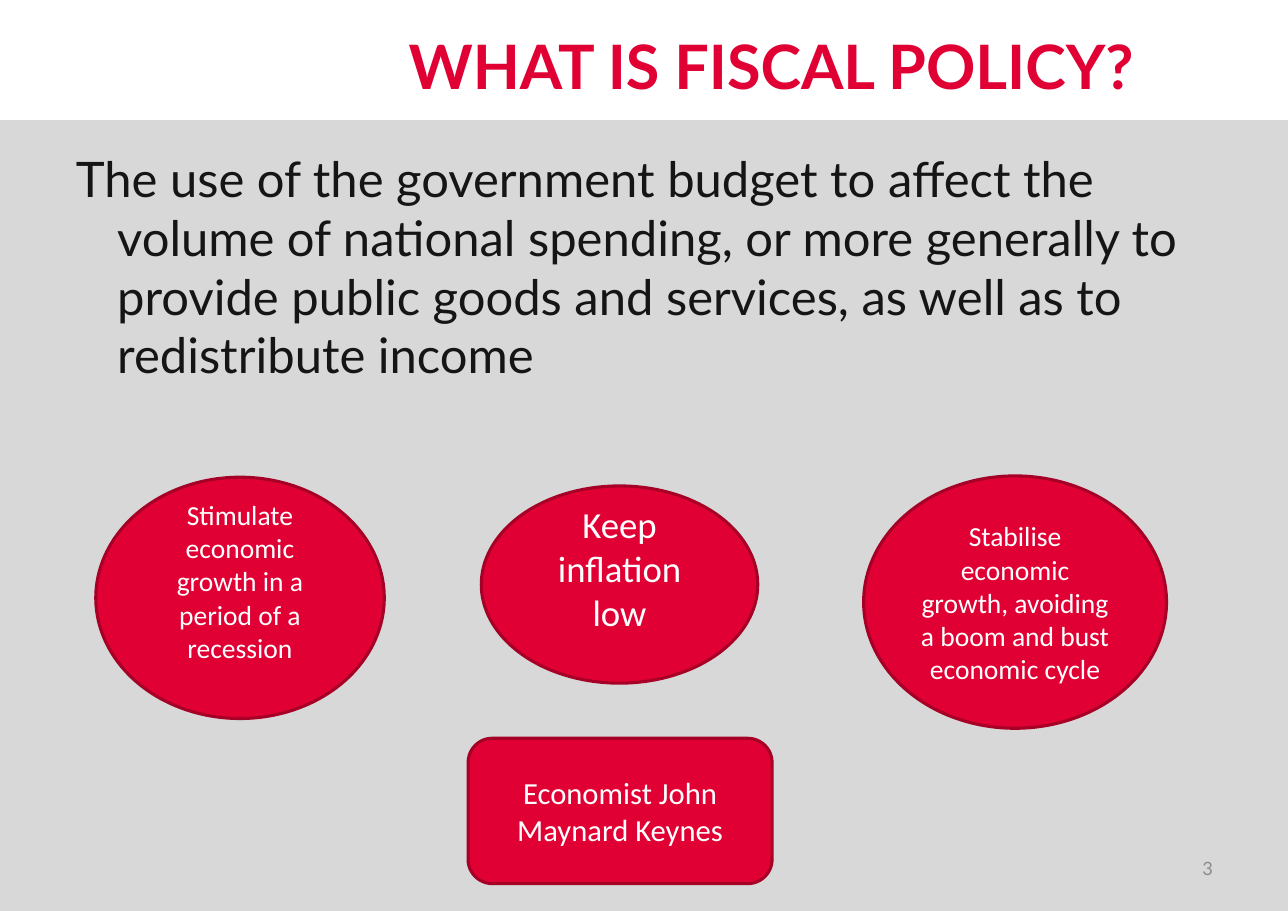
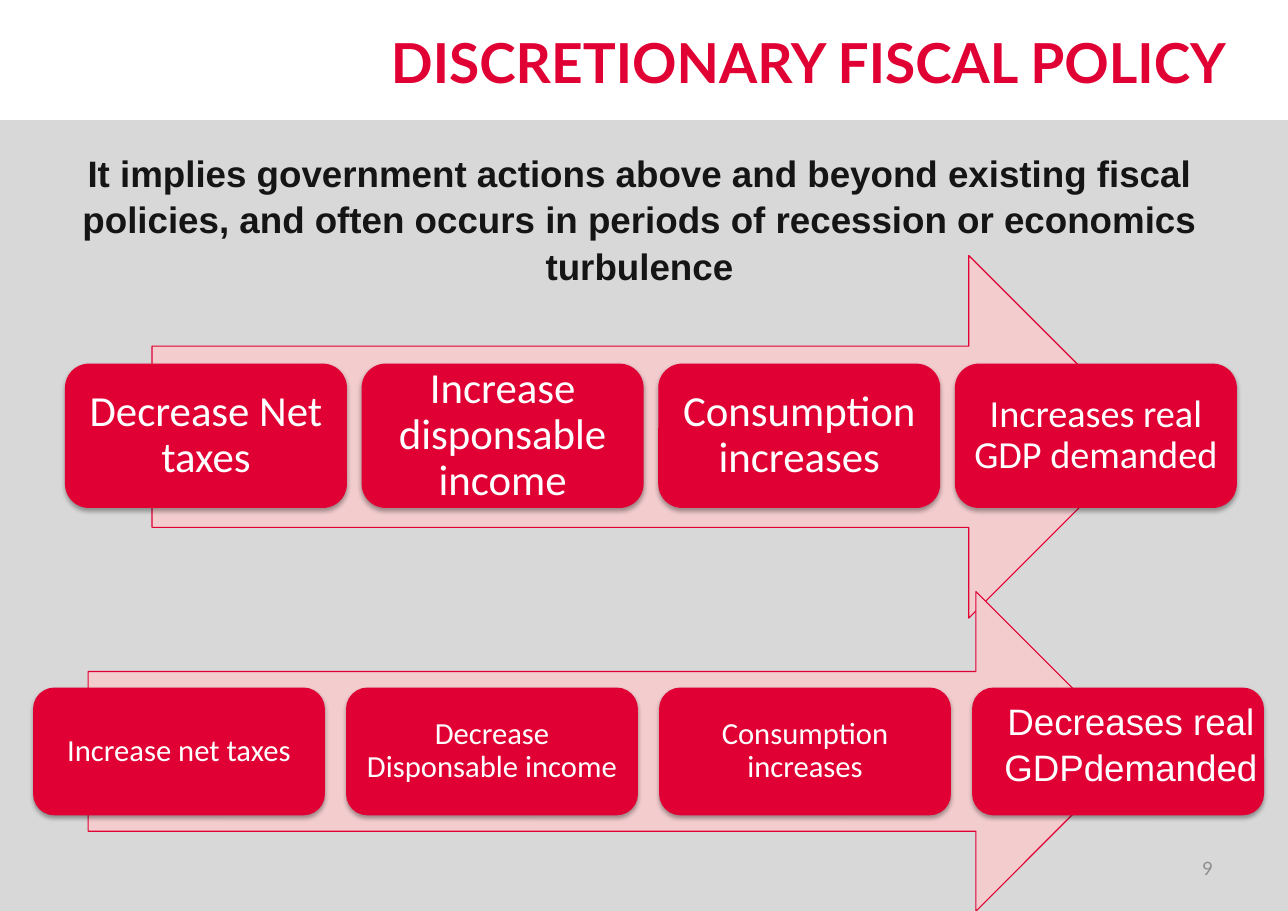
from dataclasses import dataclass
from typing import Any

import pptx
import pptx.dml.color
import pptx.enum.shapes
import pptx.enum.text
import pptx.oxml
import pptx.oxml.ns
import pptx.util

Pt = pptx.util.Pt
SHAPE = pptx.enum.shapes.MSO_SHAPE
ALIGN = pptx.enum.text.PP_ALIGN
ANCHOR = pptx.enum.text.MSO_ANCHOR

WIDTH, HEIGHT = 841.89, 595.28
BAND_TOP = 78.5
RED, DARK_RED, PINK = "E00034", "A60026", "F3CCCE"
GREY, INK, MUTED, WHITE = "D8D8D8", "151515", "8C8C8C", "FFFFFF"

TITLE = {"name": "Lato", "bold": True}
BODY = {"name": "Lato", "size": Pt(32)}
NUMBER = {"name": "Lato", "size": Pt(12)}
LABEL = {"name": "Calibri"}
STATEMENT = {"name": "Arial", "size": Pt(24)}


@dataclass
class Box:
    left: float
    top: float
    width: float
    height: float

    def lengths(self) -> list[int]:
        return [Pt(v) for v in (self.left, self.top, self.width, self.height)]


@dataclass
class Goal:
    kind: Any
    box: Box
    text: str
    size: float
    bottom: float = 3.6


@dataclass
class Step:
    text: str
    size: float
    inset: float


@dataclass
class Chain:
    arrow: Box
    first: Box
    pitch: float
    steps: list[Step]


GOALS = [
    Goal(SHAPE.ROUNDED_RECTANGLE, Box(306, 482.4, 198.7, 95),
         "Economist John Maynard Keynes", 20),
    Goal(SHAPE.OVAL, Box(314.6, 317.5, 180.7, 128.9), "Keep inflation low", 24, 25.6),
    Goal(SHAPE.OVAL, Box(62.6, 311.8, 188.6, 157.7),
         "Stimulate economic growth in a period of a recession", 18, 25.6),
    Goal(SHAPE.OVAL, Box(564.5, 311, 198, 164.9),
         "Stabilise economic growth, avoiding a boom and bust economic cycle", 18),
]

CHAINS = [
    Chain(Box(99.4, 167, 652.3, 236.9), Box(42.5, 237.6, 184.3, 94.3), 193.9, [
        Step("Decrease Net taxes", 28, 8.6),
        Step("Increase disponsable income", 28, 8.6),
        Step("Consumption increases", 28, 8.6),
        Step("Increases real GDP demanded", 25, 7),
    ]),
    Chain(Box(57.6, 386.6, 684.7, 208.8), Box(21.6, 449.3, 190.8, 83.5), 204.6, [
        Step("Increase net taxes", 20, 5.8),
        Step("Decrease Disponsable income", 20, 5.8),
        Step("Consumption increases", 20, 5.8),
        Step("", 20, 5.8),
    ]),
]


def rgb(color: str) -> pptx.dml.color.RGBColor:
    return pptx.dml.color.RGBColor.from_string(color)


def write(sp: Any, text: str, font: dict, color: str, align: Any = ALIGN.CENTER,
          anchor: Any = ANCHOR.MIDDLE, spacing: float = 1.0) -> Any:
    """Put one formatted paragraph in a shape and return the paragraph."""
    tf = sp.text_frame
    tf.word_wrap = True
    tf.vertical_anchor = anchor
    p = tf.paragraphs[0]
    p.alignment = align
    p.line_spacing = spacing
    r = p.add_run()
    r.text = text
    for name, value in font.items():
        setattr(r.font, name, value)
    r.font.color.rgb = rgb(color)
    return p


def add_text(s: Any, box: Box, text: str, font: dict, color: str, **layout: Any) -> Any:
    return write(s.shapes.add_textbox(*box.lengths()), text, font, color, **layout)


def add_shape(s: Any, kind: Any, box: Box, fill: str, line: str = "",
              line_width: float = 0) -> Any:
    sp = s.shapes.add_shape(kind, *box.lengths())
    sp.shadow.inherit = False
    sp.fill.solid()
    sp.fill.fore_color.rgb = rgb(fill)
    if line:
        sp.line.color.rgb = rgb(line)
        sp.line.width = Pt(line_width)
    else:
        sp.line.fill.background()
    return sp


def add_shadow(sp: Any) -> None:
    effects = sp._element.spPr.find(pptx.oxml.ns.qn("a:effectLst"))
    effects.append(pptx.oxml.parse_xml(
        f'<a:outerShdw {pptx.oxml.ns.nsdecls("a")} blurRad="{Pt(3.1)}" dist="{Pt(1.8)}"'
        ' dir="5400000" rotWithShape="0"><a:srgbClr val="000000">'
        '<a:alpha val="35000"/></a:srgbClr></a:outerShdw>'))


def new_slide(prs: Any, title: str, box: Box, size: float, align: Any, number: str) -> Any:
    """Add a slide with the grey band, title and slide number."""
    s = prs.slides.add_slide(prs.slide_layouts[6])
    add_shape(s, SHAPE.RECTANGLE, Box(0, BAND_TOP, WIDTH, HEIGHT - BAND_TOP), GREY)
    add_text(s, box, title, TITLE | {"size": Pt(size)}, RED, align=align)
    add_text(s, Box(603.4, 551.5, 196.6, 31.7), number, NUMBER, MUTED, align=ALIGN.RIGHT)
    return s


def add_goal(s: Any, goal: Goal) -> None:
    sp = add_shape(s, goal.kind, goal.box, RED, DARK_RED, 2)
    sp.text_frame.margin_bottom = Pt(goal.bottom)
    write(sp, goal.text, LABEL | {"size": Pt(goal.size)}, WHITE)


def add_chain(s: Any, chain: Chain) -> None:
    """Draw an arrow with evenly spaced step cards over it."""
    add_shape(s, SHAPE.RIGHT_ARROW, chain.arrow, PINK, RED, 0.75)
    first = chain.first
    for i, step in enumerate(chain.steps):
        box = Box(first.left + i * chain.pitch, first.top, first.width, first.height)
        sp = add_shape(s, SHAPE.ROUNDED_RECTANGLE, box, RED)
        add_shadow(sp)
        if step.text:
            for side in ("left", "right", "top", "bottom"):
                setattr(sp.text_frame, f"margin_{side}", Pt(step.inset))
            write(sp, step.text, LABEL | {"size": Pt(step.size)}, WHITE, spacing=0.9)


def definition_slide(prs: Any) -> None:
    s = new_slide(prs, "WHAT IS FISCAL POLICY?", Box(163.4, 16.6, 584.6, 51.8),
                  40, ALIGN.RIGHT, "3")
    p = add_text(
        s, Box(42.5, 93.6, 757.4, 200),
        "The use of the government budget to affect the volume of national spending, "
        "or more generally to provide public goods and services, as well as to "
        "redistribute income", BODY, INK, align=ALIGN.LEFT, anchor=ANCHOR.TOP)
    for name, value in {"marL": Pt(27), "indent": Pt(-27)}.items():
        p._p.get_or_add_pPr().set(name, str(value))
    for goal in GOALS:
        add_goal(s, goal)


def discretionary_slide(prs: Any) -> None:
    s = new_slide(prs, "DISCRETIONARY FISCAL POLICY", Box(215.3, 14.4, 626.5, 51.8),
                  36, ALIGN.CENTER, "9")
    upper, lower = CHAINS
    add_chain(s, upper)
    add_text(
        s, Box(29.5, 93.6, 776.9, 94.3),
        "It implies government actions above and beyond existing fiscal policies, "
        "and often occurs in periods of recession or economics turbulence",
        STATEMENT | {"bold": True}, INK, anchor=ANCHOR.TOP, spacing=1.05)
    add_chain(s, lower)
    add_text(s, Box(636.5, 451.4, 205.3, 65.5), "Decreases real GDPdemanded",
             STATEMENT, WHITE, anchor=ANCHOR.TOP, spacing=1.05)


def main() -> None:
    prs = pptx.Presentation()
    prs.slide_width, prs.slide_height = Pt(WIDTH), Pt(HEIGHT)
    definition_slide(prs)
    discretionary_slide(prs)
    prs.save("out.pptx")


if __name__ == "__main__":
    main()
